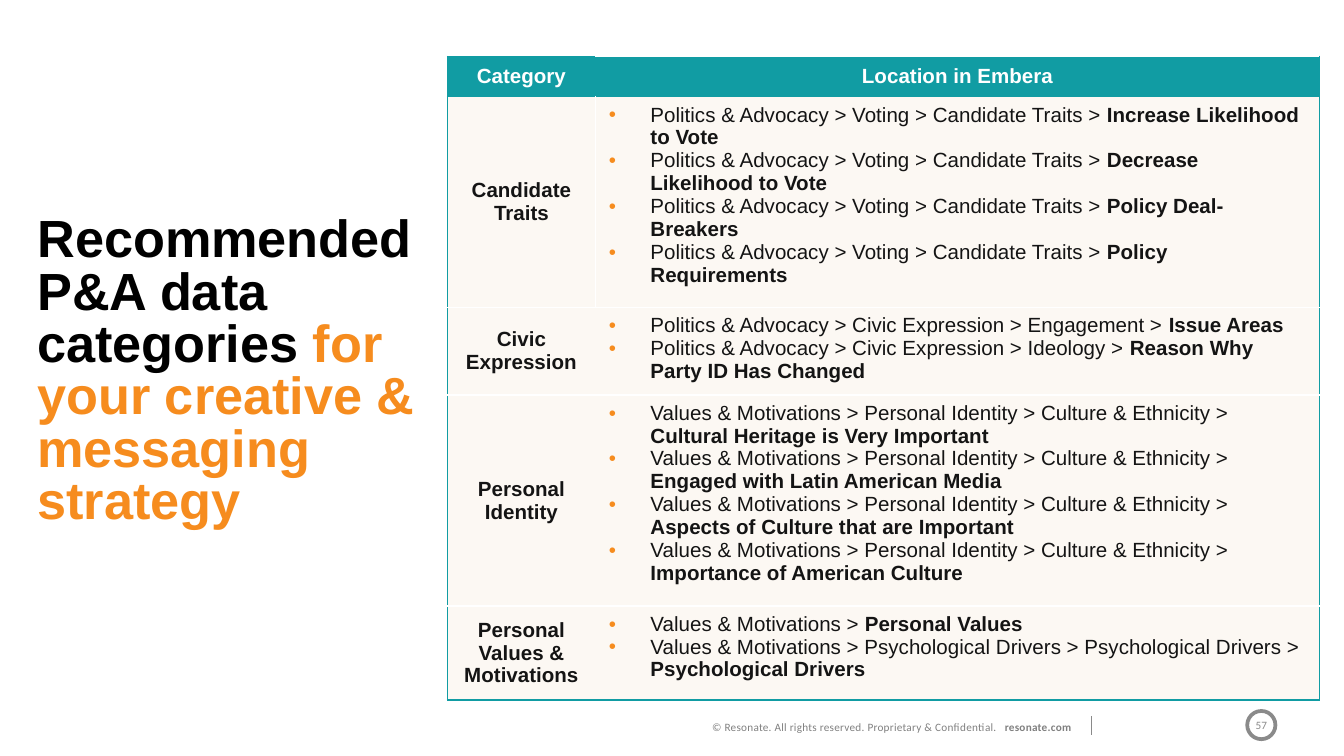
from lxml.etree import SubElement
from pptx import Presentation
from pptx.dml.color import RGBColor
from pptx.enum.shapes import MSO_CONNECTOR as Connector, MSO_SHAPE as Shape
from pptx.enum.text import MSO_ANCHOR as Anchor, PP_ALIGN as Align
from pptx.oxml.ns import qn
from pptx.util import Inches, Pt

COLORS = {
    "teal": "119CA3", "orange": "F68C1E", "cream": "FCF8F3", "ink": "141414",
    "black": "000000", "white": "FFFFFF", "footer": "808080", "gray": "8A8A8A",
}
VOTING = "Politics & Advocacy > Voting > Candidate Traits > "
CIVIC = "Politics & Advocacy > Civic Expression > "
CULTURE = "Values & Motivations > Personal Identity > Culture & Ethnicity > "
VALUES = "Values & Motivations > "
HEADERS = ("Category", "Location in Embera")
CATEGORIES = [
    ("Candidate Traits", 1.56, [
        (VOTING, "Increase Likelihood to Vote"),
        (VOTING, "Decrease Likelihood to Vote"),
        (VOTING, "Policy Deal-Breakers"),
        (VOTING, "Policy Requirements"),
    ]),
    ("Civic Expression", 0.65, [
        (CIVIC + "Engagement > ", "Issue Areas"),
        (CIVIC + "Ideology > ", "Reason Why Party ID Has Changed"),
    ]),
    ("Personal Identity", 1.57, [
        (CULTURE, "Cultural Heritage is Very Important"),
        (CULTURE, "Engaged with Latin American Media"),
        (CULTURE, "Aspects of Culture that are Important"),
        (CULTURE, "Importance of American Culture"),
    ]),
    ("Personal Values & Motivations", 0.7, [
        (VALUES, "Personal Values"),
        (VALUES + "Psychological Drivers > Psychological Drivers > ", "Psychological Drivers"),
    ]),
]


def rgb(name):
    return RGBColor.from_string(COLORS[name])


def add_run(paragraph, text, color, size, name="Arial", bold=False):
    run = paragraph.add_run()
    run.text = text
    for attribute, value in {"size": Pt(size), "name": name, "bold": bold}.items():
        setattr(run.font, attribute, value)
    run.font.color.rgb = rgb(color)
    return run


def add_text_box(slide, left, top, width, height):
    text_box = slide.shapes.add_textbox(*map(Inches, (left, top, width, height)))
    text_box.text_frame.word_wrap = True
    return text_box.text_frame


def add_title(slide, left, top, width, height):
    frame = add_text_box(slide, left, top, width, height)
    frame.margin_right = Inches(0.2)
    paragraph = frame.paragraphs[0]
    paragraph.line_spacing = Pt(28)
    add_run(paragraph, "Recommended P&A data categories ", "black", 28, bold=True)
    add_run(paragraph, "for your creative & messaging strategy", "orange", 28, bold=True)


def set_borders(cell, edges):
    """Draw the four edges, given as (colour, points) or None, by L, R, T, B."""
    properties = cell._tc.get_or_add_tcPr()
    for side in "LRTB":
        edge = edges[side]
        line = SubElement(properties, qn(f"a:ln{side}"))
        if edge is None:
            line.set("w", "0")
            SubElement(line, qn("a:noFill"))
        else:
            color, points = edge
            line.set("w", str(Pt(points)))
            fill = SubElement(line, qn("a:solidFill"))
            SubElement(fill, qn("a:srgbClr"), val=COLORS[color])


def fill_cell(cell, color):
    cell.fill.solid()
    cell.fill.fore_color.rgb = rgb(color)


def write_label(cell, text, color):
    cell.vertical_anchor = Anchor.MIDDLE
    paragraph = cell.text_frame.paragraphs[0]
    paragraph.alignment = Align.CENTER
    add_run(paragraph, text, color, 11, bold=True)


def write_locations(cell, locations):
    frame = cell.text_frame
    for index, (route, target) in enumerate(locations):
        paragraph = frame.add_paragraph() if index else frame.paragraphs[0]
        properties = paragraph._p.get_or_add_pPr()
        properties.set("marL", str(Inches(0.31)))
        properties.set("indent", str(-Inches(0.31)))
        bullet_color = SubElement(properties, qn("a:buClr"))
        SubElement(bullet_color, qn("a:srgbClr"), val=COLORS["orange"])
        SubElement(properties, qn("a:buFont"), typeface="Arial")
        SubElement(properties, qn("a:buChar"), char="•")
        add_run(paragraph, route, "ink", 11)
        add_run(paragraph, target, "ink", 11, bold=True)


def add_category_table(slide, left, top, widths, header_height):
    heights = [header_height] + [height for _, height, _ in CATEGORIES]
    box = map(Inches, (left, top, sum(widths), sum(heights)))
    table = slide.shapes.add_table(len(heights), len(widths), *box).table
    table.horz_banding = False
    for column, width in zip(table.columns, widths):
        column.width = Inches(width)
    for row, height in zip(table.rows, heights):
        row.height = Inches(height)

    outer, inner = ("teal", 0.75), ("white", 1)
    last = len(heights) - 1
    for row in range(len(heights)):
        divider = inner if row == 1 else None
        for column in range(len(widths)):
            cell = table.cell(row, column)
            top_edge = inner if row > 1 or (row, column) == (0, 1) else outer
            set_borders(cell, {
                "L": divider if column else outer,
                "R": outer if column else divider,
                "T": top_edge,
                "B": outer if row in (0, last) else inner,
            })
            fill_cell(cell, "cream" if row else "teal")

    for column, header in enumerate(HEADERS):
        write_label(table.cell(0, column), header, "white")
    for row, (category, _, locations) in enumerate(CATEGORIES, start=1):
        write_label(table.cell(row, 0), category, "ink")
        write_locations(table.cell(row, 1), locations)


def add_footer(slide, left, top, width, height):
    frame = add_text_box(slide, left, top, width, height)
    paragraph = frame.paragraphs[0]
    paragraph.alignment = Align.RIGHT
    pieces = [
        ("© Resonate. All rights reserved. Proprietary & Confidential.", False, 13),
        (" ", False, 290),
        ("resonate.com ", True, 13),
    ]
    for text, bold, spacing in pieces:
        run = add_run(paragraph, text, "footer", 6, "Calibri", bold)
        run.font._element.set("spc", str(spacing))

    right = left + width
    ends = map(Inches, (right + 0.03, top + 0.02, right + 0.03, top + 0.16))
    divider = slide.shapes.add_connector(Connector.STRAIGHT, *ends)
    divider.line.color.rgb = rgb("gray")
    divider.line.width = Pt(0.75)
    SubElement(divider._element.spPr, qn("a:effectLst"))


def add_page_number(slide, left, top, size, number):
    circle = slide.shapes.add_shape(Shape.OVAL, *map(Inches, (left, top, size, size)))
    circle.shadow.inherit = False
    circle.fill.background()
    circle.line.color.rgb = rgb("gray")
    circle.line.width = Pt(2)
    frame = circle.text_frame
    frame.word_wrap = False
    frame.vertical_anchor = Anchor.MIDDLE
    for side in ("left", "right", "top", "bottom"):
        setattr(frame, f"margin_{side}", 0)
    paragraph = frame.paragraphs[0]
    paragraph.alignment = Align.CENTER
    add_run(paragraph, number, "gray", 6, "Calibri")


def main():
    presentation = Presentation()
    presentation.slide_width = Inches(10)
    presentation.slide_height = Inches(10) * 9 // 16
    slide = presentation.slides.add_slide(presentation.slide_layouts[6])
    add_footer(slide, -0.14, 5.31, 8.23, 0.2)
    add_page_number(slide, 9.28, 5.29, 0.21, "57")
    add_title(slide, 0.18, 1.56, 3.62, 2.24)
    add_category_table(slide, 3.33, 0.42, (1.1, 5.39), 0.3)
    presentation.save("out.pptx")


if __name__ == "__main__":
    main()
